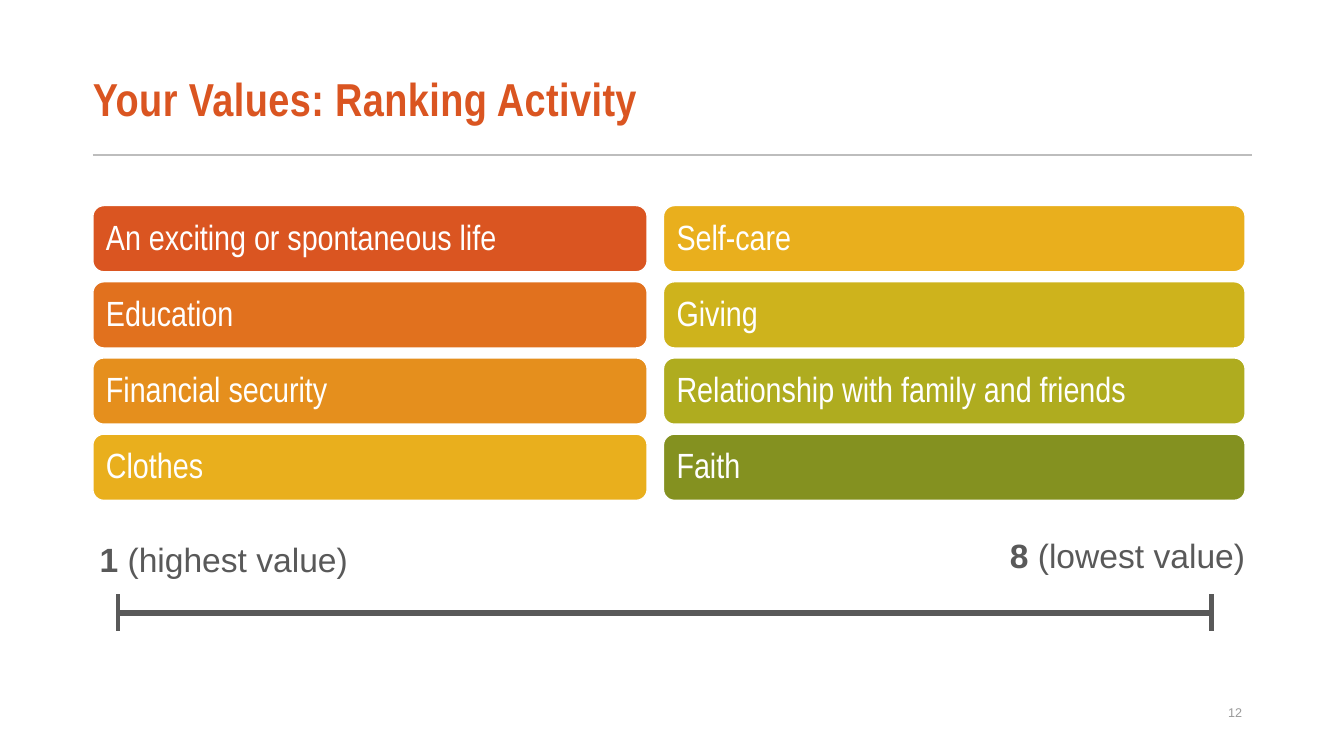
"""Build the values ranking slide with eight cards and a ranking scale."""
from dataclasses import dataclass

import pptx
import pptx.dml.color
import pptx.enum.shapes
import pptx.enum.text
import pptx.oxml.ns
import pptx.shapes.autoshape
import pptx.slide
import pptx.text.text
import pptx.util
from lxml import etree

Cm = pptx.util.Cm
Pt = pptx.util.Pt
ALIGN = pptx.enum.text.PP_ALIGN
ANCHOR = pptx.enum.text.MSO_ANCHOR


@dataclass(frozen=True)
class Theme:
    heading_font: str = "Arial Narrow"
    body_font: str = "Arial"
    accent: str = "DA5521"
    rule: str = "BDBDBD"
    ink: str = "595959"
    muted: str = "9A9A9A"
    white: str = "FFFFFF"
    title_size: float = 33
    card_size: float = 25
    label_size: float = 24
    number_size: float = 9


@dataclass(frozen=True)
class Card:
    text: str
    color: str


@dataclass(frozen=True)
class Column:
    left: float
    width: float
    cards: tuple[Card, ...]


@dataclass(frozen=True)
class Label:
    left: float
    top: float
    rank: str
    meaning: str


@dataclass(frozen=True)
class Stroke:
    x1: float
    y1: float
    x2: float
    y2: float
    color: str
    weight: float


THEME = Theme()
MARGIN = 2.34
CARD_TOP, CARD_HEIGHT, CARD_PITCH = 5.18, 1.67, 1.92
SCALE_LEFT, SCALE_RIGHT, SCALE_Y, TICK = 2.97, 30.53, 15.44, 0.46

COLUMNS = (
    Column(MARGIN, 13.97, (
        Card("An exciting or spontaneous life", THEME.accent),
        Card("Education", "E1711E"),
        Card("Financial security", "E58F1D"),
        Card("Clothes", "E9AF1D"),
    )),
    Column(16.72, 14.66, (
        Card("Self-care", "E9AF1D"),
        Card("Giving", "CEB31C"),
        Card("Relationship with family and friends", "AFAC1F"),
        Card("Faith", "849120"),
    )),
)
LABELS = (
    Label(2.26, 13.54, "1", " (highest value)"),
    Label(25.2, 13.44, "8", " (lowest value)"),
)
STROKES = (
    Stroke(MARGIN, 3.91, 31.55, 3.91, THEME.rule, 1.5),
    Stroke(SCALE_LEFT, SCALE_Y, SCALE_RIGHT, SCALE_Y, THEME.ink, 4.5),
    *(Stroke(x, SCALE_Y - TICK, x, SCALE_Y + TICK, THEME.ink, 3)
      for x in (SCALE_LEFT, SCALE_RIGHT)),
)


def rgb(color: str) -> pptx.dml.color.RGBColor:
    return pptx.dml.color.RGBColor.from_string(color)


def add_run(p: pptx.text.text._Paragraph, text: str, font: str, size: float,
            color: str, bold: bool = False) -> pptx.text.text._Run:
    r = p.add_run()
    r.text = text
    r.font.name = font
    r.font.size = Pt(size)
    r.font.bold = bold
    r.font.color.rgb = rgb(color)
    return r


def add_box(s: pptx.slide.Slide, left: float, top: float, width: float,
            height: float) -> pptx.text.text.TextFrame:
    tf = s.shapes.add_textbox(Cm(left), Cm(top), Cm(width), Cm(height)).text_frame
    tf.word_wrap = True
    return tf


def add_stroke(s: pptx.slide.Slide, stroke: Stroke) -> None:
    line = s.shapes.add_connector(
        pptx.enum.shapes.MSO_CONNECTOR.STRAIGHT,
        Cm(stroke.x1), Cm(stroke.y1), Cm(stroke.x2), Cm(stroke.y2))
    line.line.color.rgb = rgb(stroke.color)
    line.line.width = Pt(stroke.weight)
    etree.SubElement(line._element.spPr, pptx.oxml.ns.qn("a:effectLst"))


def add_column(s: pptx.slide.Slide, column: Column) -> None:
    group = s.shapes.add_group_shape()
    for row, card in enumerate(column.cards):
        sp = group.shapes.add_shape(
            pptx.enum.shapes.MSO_SHAPE.ROUNDED_RECTANGLE,
            Cm(column.left), Cm(CARD_TOP + row * CARD_PITCH),
            Cm(column.width), Cm(CARD_HEIGHT))
        fill_card(sp, card)


def fill_card(sp: pptx.shapes.autoshape.Shape, card: Card) -> None:
    sp.shadow.inherit = False
    sp.fill.solid()
    sp.fill.fore_color.rgb = rgb(card.color)
    sp.line.color.rgb = rgb(THEME.white)
    sp.line.width = Pt(1)
    tf = sp.text_frame
    tf.word_wrap = True
    tf.vertical_anchor = ANCHOR.MIDDLE
    tf.margin_left = tf.margin_right = tf.margin_top = tf.margin_bottom = Cm(0.25)
    p = tf.paragraphs[0]
    p.alignment = ALIGN.LEFT
    p.line_spacing = 0.9
    add_run(p, card.text, THEME.heading_font, THEME.card_size, THEME.white)


def add_label(s: pptx.slide.Slide, label: Label) -> None:
    tf = add_box(s, label.left, label.top, 7.62, 1.22)
    tf.auto_size = pptx.enum.text.MSO_AUTO_SIZE.SHAPE_TO_FIT_TEXT
    p = tf.paragraphs[0]
    p.line_spacing = 0.95
    for text, bold in ((label.rank, True), (label.meaning, False)):
        add_run(p, text, THEME.body_font, THEME.label_size, THEME.ink, bold)


def add_title(s: pptx.slide.Slide, text: str) -> None:
    tf = add_box(s, MARGIN, 1.37, 29.21, 2.41)
    tf.margin_left = 0
    tf.vertical_anchor = ANCHOR.MIDDLE
    p = tf.paragraphs[0]
    p.line_spacing = 0.87
    r = add_run(p, text, THEME.heading_font, THEME.title_size, THEME.accent, True)
    r.font._element.set("spc", "30")


def add_number(s: pptx.slide.Slide, text: str) -> None:
    p = add_box(s, 23.93, 17.65, 7.62, 1.02).paragraphs[0]
    p.alignment = ALIGN.RIGHT
    add_run(p, text, THEME.body_font, THEME.number_size, THEME.muted)


def main() -> None:
    prs = pptx.Presentation()
    prs.slide_width, prs.slide_height = Cm(33.87), Cm(19.05)
    s = prs.slides.add_slide(prs.slide_layouts[6])
    add_title(s, "Your Values: Ranking Activity")
    for column in COLUMNS:
        add_column(s, column)
    for stroke in STROKES:
        add_stroke(s, stroke)
    for label in LABELS:
        add_label(s, label)
    add_number(s, "12")
    prs.save("out.pptx")


if __name__ == "__main__":
    main()
